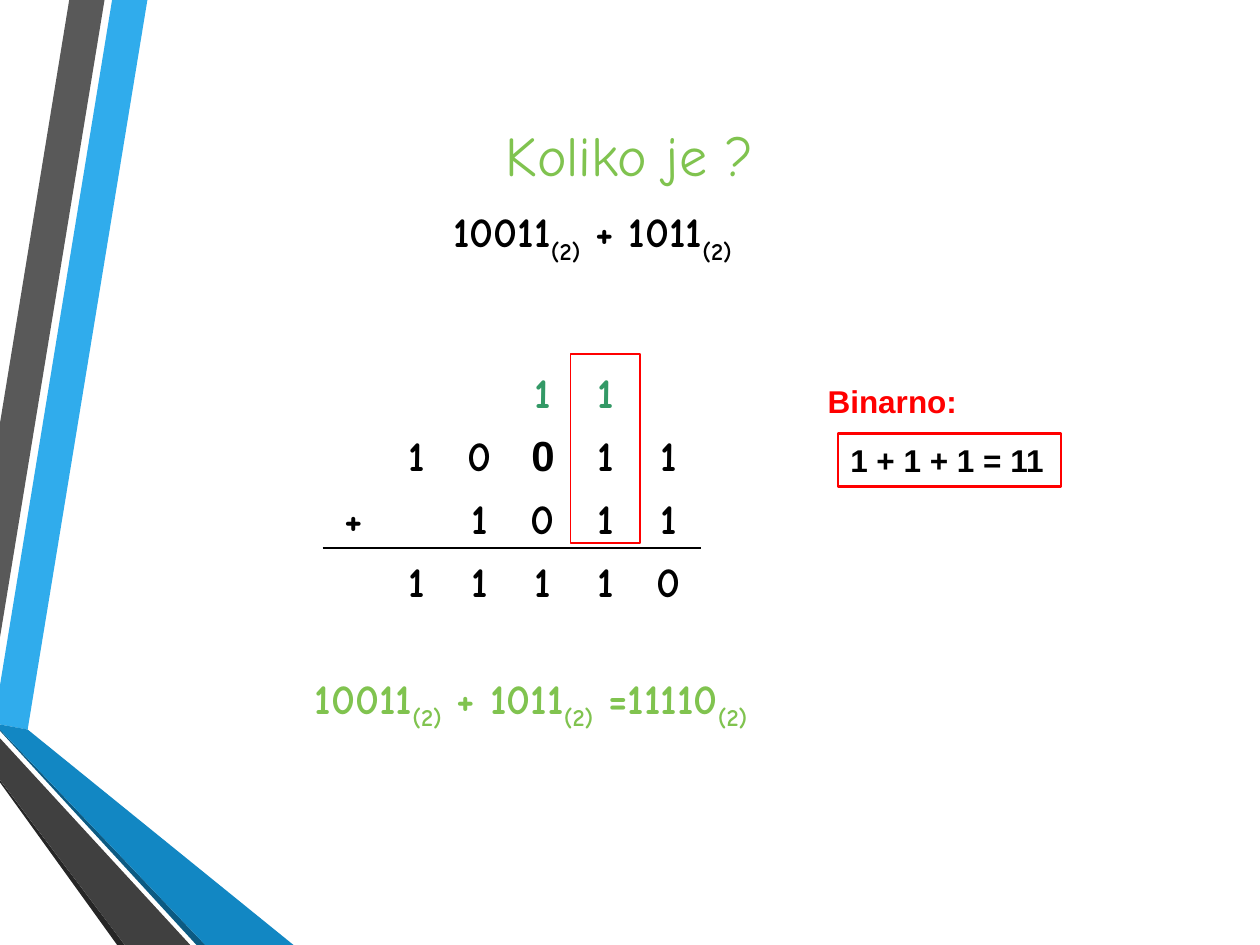
import pptx
import pptx.util
import pptx.dml.color
import pptx.enum.shapes
import pptx.enum.text
from pptx.oxml.ns import qn
from lxml import etree

Inches = pptx.util.Inches
Pt = pptx.util.Pt
RGBColor = pptx.dml.color.RGBColor
Align = pptx.enum.text.PP_ALIGN
Anchor = pptx.enum.text.MSO_ANCHOR

BLACK = RGBColor(0x00, 0x00, 0x00)
RED = RGBColor(0xFF, 0x00, 0x00)
LIME = RGBColor(0x80, 0xC3, 0x4F)
GREEN = RGBColor(0x33, 0x99, 0x66)
SKY = RGBColor(0x30, 0xAC, 0xEC)
BLUE = RGBColor(0x12, 0x87, 0xC3)
NAVY = RGBColor(0x0C, 0x5A, 0x82)
GREY = RGBColor(0x59, 0x59, 0x59)
DARK = RGBColor(0x40, 0x40, 0x40)
COAL = RGBColor(0x26, 0x26, 0x26)

HAND = "Comic Neue"
SANS = "Arial"
CELL = 0.5
LEFT, TOP = 2.56, 2.86

BANDS = [
    (SKY, [(0, 5.44), (0, 5.75), (0.22, 5.79), (1.17, 0), (0.89, 0)]),
    (GREY, [(0.83, 0), (0.55, 0), (0, 3.36), (0, 5.06)]),
    (COAL, [(0, 6.19), (0, 6.21), (0.93, 7.5), (0.99, 7.5)]),
    (NAVY, [(0, 5.79), (0, 5.8), (1.56, 7.5), (1.63, 7.5)]),
    (BLUE, [(0, 5.79), (1.63, 7.5), (2.33, 7.5), (0.22, 5.79), (0, 5.75)]),
    (DARK, [(0, 6.19), (0.99, 7.5), (1.51, 7.5), (0, 5.86)]),
]
ROWS = ["   11 ", " 10011", "+ 1011", " 11110"]


def add_band(slide, color, points):
    """Draw one filled polygon of the side ornament."""
    start, *rest = [(Inches(x), Inches(y)) for x, y in points]
    build = slide.shapes.build_freeform(*start)
    build.add_line_segments(rest, close=True)
    band = build.convert_to_shape()
    band.shadow.inherit = False
    band.fill.solid()
    band.fill.fore_color.rgb = color
    band.line.fill.background()


def style(para, size, color, name=HAND, bold=True, align=Align.LEFT):
    """Set the font and alignment of a paragraph."""
    para.alignment = align
    font = para.font
    font.size, font.name, font.bold = Pt(size), name, bold
    font.color.rgb = color


def add_text(slide, box, text, anchor=Anchor.MIDDLE, inset=0.1, **look):
    """Add a one-paragraph text box and return its paragraph."""
    frame = slide.shapes.add_textbox(*map(Inches, box)).text_frame
    frame.word_wrap = True
    frame.vertical_anchor = anchor
    frame.margin_left = frame.margin_right = Inches(inset)
    para = frame.paragraphs[0]
    para.text = text
    style(para, **look)
    return para


def add_sum(slide, box, terms, color):
    """Add a line of terms, each followed by its number base."""
    para = add_text(slide, box, "", size=24, color=color)
    for term in terms:
        para.add_run().text = term
        base = para.add_run()
        base.text = "(2)"
        base.font._element.set("baseline", "-30000")


def add_digits(slide):
    """Lay out the column addition on an even grid."""
    for i, row in enumerate(ROWS):
        for j, mark in enumerate(row):
            if mark == " ":
                continue
            box = (LEFT + j * CELL, TOP + i * CELL, CELL, CELL)
            add_text(slide, box, mark, Anchor.BOTTOM, 0, size=24,
                     color=BLACK if i else GREEN,
                     name=SANS if (i, j) == (1, 3) else HAND,
                     align=Align.CENTER)


def add_rule(slide):
    """Draw the line above the result."""
    y = Inches(4.35)
    rule = slide.shapes.add_connector(
        pptx.enum.shapes.MSO_CONNECTOR.STRAIGHT,
        Inches(LEFT), y, Inches(LEFT + 6 * CELL), y)
    rule.line.color.rgb = BLACK
    rule.line.width = Pt(1)
    etree.SubElement(rule._element.spPr, qn("a:effectLst"))


def add_frame(slide, box, width):
    """Draw an unfilled red rectangle and return it."""
    shape = slide.shapes.add_shape(
        pptx.enum.shapes.MSO_SHAPE.RECTANGLE, *map(Inches, box))
    shape.shadow.inherit = False
    shape.fill.background()
    shape.line.color.rgb = RED
    shape.line.width = Pt(width)
    return shape


def add_title(slide, text):
    """Place and format the title."""
    title = slide.shapes.title
    title.left, title.top = Inches(0.5), Inches(0.6)
    title.width, title.height = Inches(9), Inches(1.25)
    title.text_frame.vertical_anchor = Anchor.MIDDLE
    title.text_frame.text = text
    style(title.text_frame.paragraphs[0], 32, LIME, bold=False,
          align=Align.CENTER)


def main():
    """Build the slide and save it."""
    deck = pptx.Presentation()
    deck.slide_width, deck.slide_height = Inches(10), Inches(7.5)
    slide = deck.slides.add_slide(deck.slide_layouts[5])
    for color, points in BANDS:
        add_band(slide, color, points)
    add_title(slide, "Koliko je ?")
    add_sum(slide, (3.5, 1.62, 3.12, 0.5), ["10011", " + 1011"], BLACK)
    add_digits(slide)
    add_rule(slide)
    add_sum(slide, (2.4, 5.32, 4.78, 0.5),
            ["10011", " + 1011", " =11110"], LIME)
    add_frame(slide, (4.53, 2.81, 0.55, 1.5), 0.75)
    note = add_frame(slide, (6.65, 3.44, 1.77, 0.42), 1.5).text_frame
    note.text = "1 + 1 + 1 = 11"
    style(note.paragraphs[0], 18, BLACK, SANS)
    add_text(slide, (6.47, 2.98, 1.3, 0.4), "Binarno:",
             size=18, color=RED, name=SANS)
    deck.save("out.pptx")


if __name__ == "__main__":
    main()
